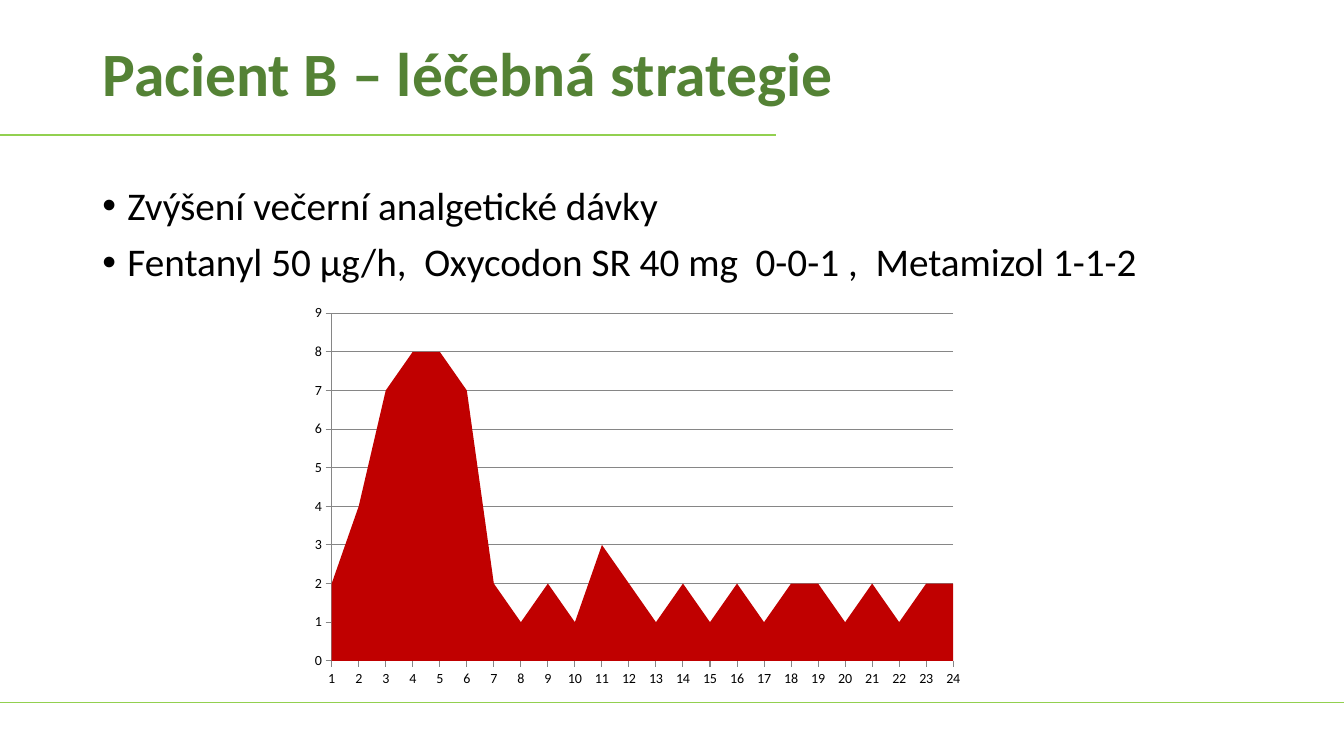
from dataclasses import dataclass

from lxml.etree import SubElement
from pptx import Presentation
from pptx.chart.data import CategoryChartData
from pptx.dml.color import RGBColor
from pptx.enum.chart import XL_CHART_TYPE as ChartType, XL_TICK_MARK as TickMark
from pptx.enum.shapes import MSO_CONNECTOR as Connector
from pptx.enum.text import MSO_ANCHOR as Anchor, MSO_AUTO_SIZE as AutoSize, PP_ALIGN as Align
from pptx.oxml.ns import qn
from pptx.slide import Slide
from pptx.text.text import _Paragraph as Paragraph
from pptx.util import Pt

FONT = "Calibri"
TITLE_GREEN = RGBColor(0x54, 0x82, 0x35)
RULE_GREEN = RGBColor(0x92, 0xD0, 0x50)
PAIN_RED = RGBColor(0xC0, 0x00, 0x00)
AXIS_GREY = RGBColor(0x86, 0x86, 0x86)
BLACK = RGBColor(0, 0, 0)

SLIDE_WIDTH, SLIDE_HEIGHT = 960, 540
MARGIN, CONTENT_WIDTH = 66, 828
BULLET_INDENT = 18

TREATMENT = [
    "Zvýšení večerní analgetické dávky",
    "Fentanyl 50 μg/h,  Oxycodon SR 40 mg  0-0-1 ,  Metamizol 1-1-2",
]
PAIN_BY_HOUR = [2, 4, 7, 8, 8, 7, 2, 1, 2, 1, 3, 2,
                1, 2, 1, 2, 1, 2, 2, 1, 2, 1, 2, 2]


@dataclass(frozen=True)
class Rule:
    y: float
    length: float
    weight: float


RULES = [Rule(501.8, SLIDE_WIDTH, 1), Rule(96.5, 554.4, 2)]


def add_run(paragraph: Paragraph, text: str, size: float, color: RGBColor, bold: bool = False) -> None:
    run = paragraph.add_run()
    run.text = text
    run.font.name = FONT
    run.font.size = Pt(size)
    run.font.bold = bold
    run.font.color.rgb = color


def add_title(slide: Slide, text: str) -> None:
    title = slide.shapes.title
    title.left, title.top, title.width, title.height = Pt(MARGIN), Pt(19.4), Pt(CONTENT_WIDTH), Pt(70.6)
    frame = title.text_frame
    frame.vertical_anchor = Anchor.MIDDLE
    frame.auto_size = AutoSize.NONE
    paragraph = frame.paragraphs[0]
    paragraph.alignment = Align.LEFT
    paragraph.line_spacing = 0.9
    add_run(paragraph, text, 44, TITLE_GREEN, bold=True)


def add_bullets(slide: Slide, items: list[str]) -> None:
    box = slide.shapes.add_textbox(Pt(MARGIN), Pt(129.6), Pt(CONTENT_WIDTH), Pt(357))
    frame = box.text_frame
    frame.word_wrap = True
    for index, item in enumerate(items):
        paragraph = frame.add_paragraph() if index else frame.paragraphs[0]
        paragraph.line_spacing = 0.9
        paragraph.space_before = Pt(10)
        properties = paragraph._p.get_or_add_pPr()
        properties.set("marL", str(Pt(BULLET_INDENT)))
        properties.set("indent", str(Pt(-BULLET_INDENT)))
        SubElement(properties, qn("a:buFont"), typeface="Arial")
        SubElement(properties, qn("a:buChar"), char="•")
        add_run(paragraph, item, 28, BLACK)


def add_rule(slide: Slide, rule: Rule) -> None:
    line = slide.shapes.add_connector(Connector.STRAIGHT, Pt(0), Pt(rule.y), Pt(rule.length), Pt(rule.y))
    line.line.color.rgb = RULE_GREEN
    line.line.width = Pt(rule.weight)
    SubElement(line._element.spPr, qn("a:effectLst"))


def add_pain_chart(slide: Slide, values: list[int]) -> None:
    data = CategoryChartData()
    data.categories = [str(hour) for hour in range(1, len(values) + 1)]
    data.add_series("Series 1", values)
    chart = slide.shapes.add_chart(
        ChartType.AREA, Pt(215.3), Pt(212.4), Pt(480.2), Pt(283.7), data).chart
    chart.has_legend = False
    chart.has_title = False
    chart.font.name = FONT
    chart.font.size = Pt(10)
    chart.font.color.rgb = BLACK

    plot = chart.plots[0]
    plot.vary_by_categories = False
    fill = plot.series[0].format.fill
    fill.solid()
    fill.fore_color.rgb = PAIN_RED

    hours, pain = chart.category_axis, chart.value_axis
    for axis in (hours, pain):
        axis.major_tick_mark = TickMark.OUTSIDE
        axis.minor_tick_mark = TickMark.NONE
        axis.format.line.color.rgb = AXIS_GREY
        axis.format.line.width = Pt(0.75)
    hours.has_major_gridlines = False
    pain.has_major_gridlines = True
    gridlines = pain.major_gridlines.format.line
    gridlines.color.rgb = AXIS_GREY
    gridlines.width = Pt(0.75)
    pain.minimum_scale, pain.maximum_scale, pain.major_unit = 0, 9, 1
    # The area starts and ends on the edges of the plot
    for crossing in pain._element.findall(qn("c:crossBetween")):
        crossing.set("val", "midCat")


def main() -> None:
    deck = Presentation()
    deck.slide_width, deck.slide_height = Pt(SLIDE_WIDTH), Pt(SLIDE_HEIGHT)
    slide = deck.slides.add_slide(deck.slide_layouts.get_by_name("Title Only"))

    # Heading and treatment
    add_title(slide, "Pacient B – léčebná strategie")
    add_bullets(slide, TREATMENT)

    # Green rules
    for rule in RULES:
        add_rule(slide, rule)

    # Pain over 24 hours
    add_pain_chart(slide, PAIN_BY_HOUR)

    deck.save("out.pptx")


if __name__ == "__main__":
    main()
